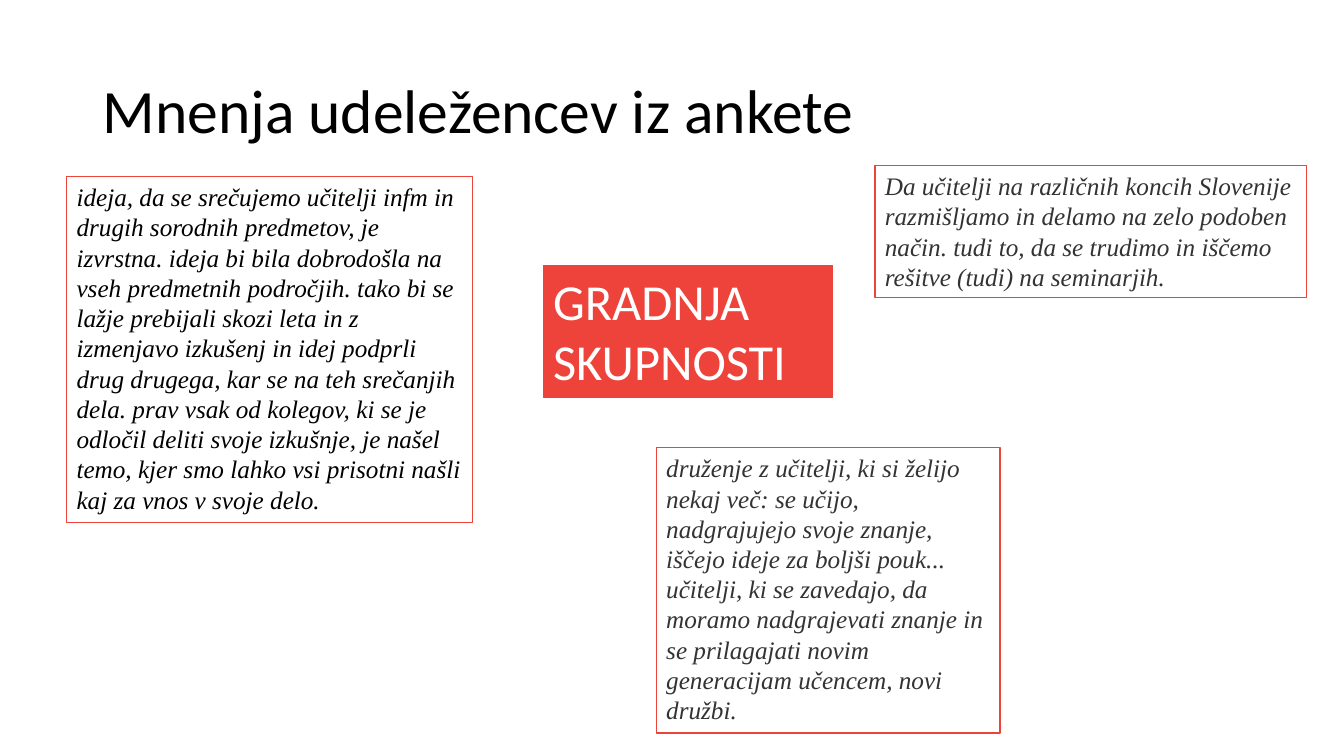
from dataclasses import dataclass
from typing import Any, Optional

from pptx import Presentation
from pptx.dml.color import RGBColor
from pptx.enum.shapes import MSO_SHAPE as Preset
from pptx.enum.text import MSO_ANCHOR as Anchor, MSO_AUTO_SIZE as AutoSize, PP_ALIGN as Align
from pptx.util import Cm, Pt

RED = RGBColor(0xEE, 0x43, 0x3A)
WHITE = RGBColor(0xFF, 0xFF, 0xFF)
BLACK = RGBColor(0x00, 0x00, 0x00)
GREY = RGBColor(0x33, 0x33, 0x33)

TITLE_FONT = {"name": "Calibri", "size": Pt(44)}
TOPIC_FONT = {"name": "Calibri", "size": Pt(36)}
QUOTE_FONT = {"name": "Times New Roman", "size": Pt(18), "italic": True}


@dataclass(frozen=True)
class Box:
    """A bordered text box; lengths in centimetres, border in points."""
    left: float
    top: float
    width: float
    height: float
    text: str
    text_color: RGBColor
    border: float
    fill: Optional[RGBColor] = WHITE
    font: Any = None


BOXES = [
    Box(1.68, 4.45, 10.24, 8.71,
        "ideja, da se srečujemo učitelji infm in drugih sorodnih predmetov, je izvrstna. "
        "ideja bi bila dobrodošla na vseh predmetnih področjih. tako bi se lažje prebijali "
        "skozi leta in z izmenjavo izkušenj in idej podprli drug drugega, kar se na teh "
        "srečanjih dela. prav vsak od kolegov, ki se je odločil deliti svoje izkušnje, je "
        "našel temo, kjer smo lahko vsi prisotni našli kaj za vnos v svoje delo.",
        BLACK, 0.75, fill=None),
    Box(13.69, 6.68, 7.29, 3.33, "GRADNJA SKUPNOSTI", WHITE, 0.5,
        fill=RED, font=TOPIC_FONT),
    Box(16.54, 11.28, 8.66, 7.19,
        "druženje z učitelji, ki si želijo nekaj več: se učijo, nadgrajujejo svoje znanje, "
        "iščejo ideje za boljši pouk... učitelji, ki se zavedajo, da moramo nadgrajevati "
        "znanje in se prilagajati novim generacijam učencem, novi družbi.",
        GREY, 1),
    Box(22.05, 4.17, 10.87, 3.33,
        "Da učitelji na različnih koncih Slovenije razmišljamo in delamo na zelo podoben "
        "način. tudi to, da se trudimo in iščemo rešitve (tudi) na seminarjih.",
        GREY, 1),
]


def apply_format(target: Any, values: dict[str, Any]) -> None:
    for name, value in values.items():
        setattr(target, name, value)


def write_text(shape: Any, text: str, font: dict[str, Any], color: RGBColor) -> Any:
    """Fill the shape with one left-aligned run and return its paragraph."""
    paragraph = shape.text_frame.paragraphs[0]
    paragraph.alignment = Align.LEFT
    run = paragraph.add_run()
    run.text = text
    apply_format(run.font, font)
    run.font.color.rgb = color
    return paragraph


def add_title(slide: Any) -> None:
    title = slide.shapes.title
    apply_format(title, {"left": Cm(2.33), "top": Cm(1.01),
                         "width": Cm(29.21), "height": Cm(3.68)})
    apply_format(title.text_frame, {"word_wrap": True, "auto_size": AutoSize.NONE,
                                    "vertical_anchor": Anchor.MIDDLE})
    paragraph = write_text(title, "Mnenja udeležencev iz ankete", TITLE_FONT, BLACK)
    paragraph.line_spacing = 0.9


def add_box(slide: Any, box: Box) -> None:
    shape = slide.shapes.add_shape(Preset.RECTANGLE, Cm(box.left), Cm(box.top),
                                   Cm(box.width), Cm(box.height))
    shape.shadow.inherit = False
    if box.fill is None:
        shape.fill.background()
    else:
        shape.fill.solid()
        shape.fill.fore_color.rgb = box.fill
    shape.line.color.rgb = RED
    shape.line.width = Pt(box.border)
    apply_format(shape.text_frame, {"word_wrap": True, "vertical_anchor": Anchor.TOP,
                                    "auto_size": AutoSize.SHAPE_TO_FIT_TEXT})
    write_text(shape, box.text, box.font or QUOTE_FONT, box.text_color)


def main() -> None:
    presentation = Presentation()
    apply_format(presentation, {"slide_width": Cm(33.87), "slide_height": Cm(19.05)})
    title_only = presentation.slide_layouts[5]
    slide = presentation.slides.add_slide(title_only)
    add_title(slide)
    for box in BOXES:
        add_box(slide, box)
    presentation.save("out.pptx")


if __name__ == "__main__":
    main()
